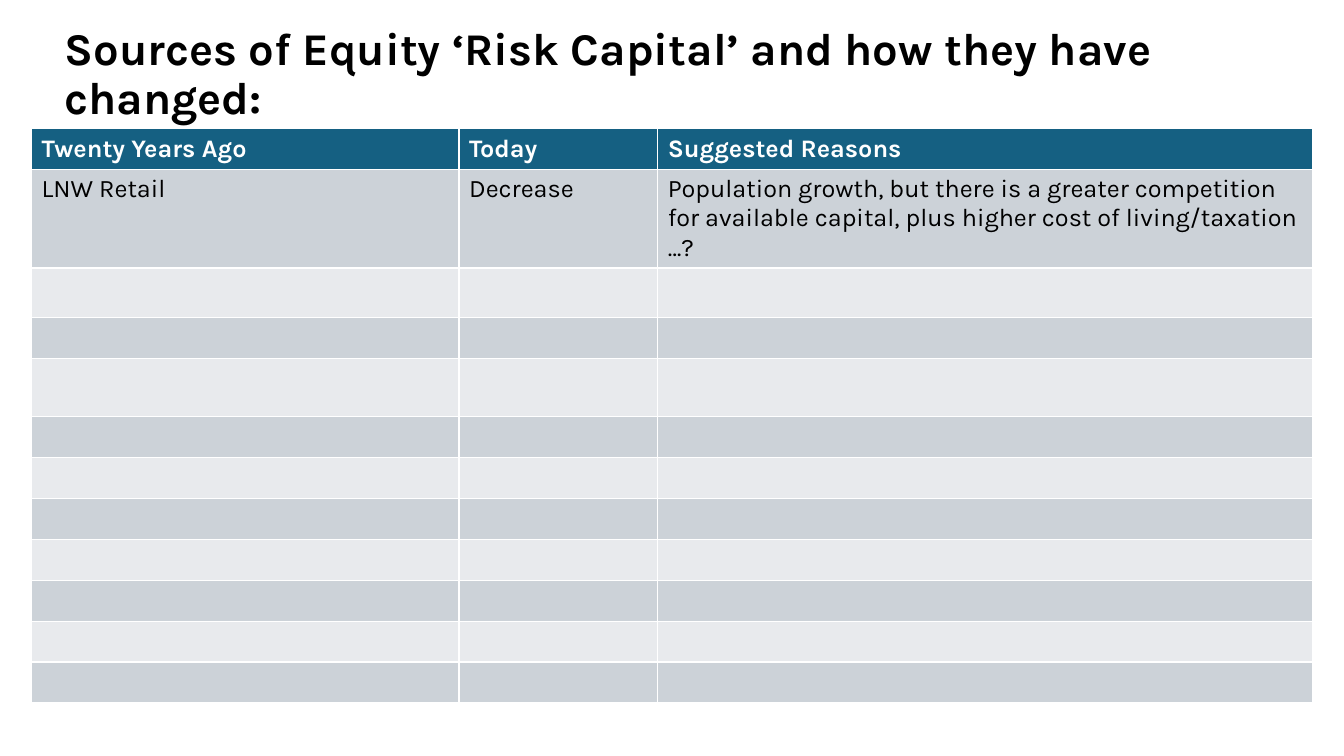
from pptx import Presentation
from pptx.dml.color import RGBColor
from pptx.enum.text import MSO_ANCHOR as Anchor, MSO_AUTO_SIZE as AutoSize, PP_ALIGN as Align
from pptx.util import Inches, Pt

BLACK = RGBColor(0x00, 0x00, 0x00)
WHITE = RGBColor(0xFF, 0xFF, 0xFF)
TEAL = RGBColor(0x15, 0x60, 0x82)
GREY = RGBColor(0xCC, 0xD2, 0xD8)
PALE = RGBColor(0xE8, 0xEA, 0xED)

COLUMNS = [4.24, 1.97, 6.5]
ROWS = [0.4, 0.98, 0.49, 0.39, 0.58] + [0.4] * 7
HEADINGS = ["Twenty Years Ago", "Today", "Suggested Reasons"]
RETAIL = [
    "LNW Retail",
    "Decrease",
    "Population growth, but there is a greater competition for available capital, "
    "plus higher cost of living/taxation …?",
]


class SlideBuilder:
    """Holds the style and the current slide, and adds its elements."""

    def __init__(self, deck, font):
        self.deck = deck
        self.font = font
        self.page = deck.slides.add_slide(deck.slide_layouts[5])

    def place(self, left, top, width=0, height=0):
        """Turn percentages of the slide's size into lengths."""
        wide, high = self.deck.slide_width / 100, self.deck.slide_height / 100
        return int(left * wide), int(top * high), int(width * wide), int(height * high)

    def add_span(self, para, text, size, color, bold=False):
        """Add one run to a paragraph."""
        span = para.add_run()
        span.text = text
        span.font.name = self.font
        span.font.size = Pt(size)
        span.font.bold = bold
        span.font.color.rgb = color

    def add_title(self, text, *shares):
        """Fill and move the title placeholder."""
        box = self.page.shapes.title
        box.left, box.top, box.width, box.height = self.place(*shares)
        frame = box.text_frame
        frame.word_wrap = True
        frame.auto_size = AutoSize.NONE
        frame.vertical_anchor = Anchor.MIDDLE
        para = frame.paragraphs[0]
        para.alignment = Align.LEFT
        para.line_spacing = 0.9
        self.add_span(para, text, 32.4, BLACK, True)

    def add_grid(self, lines, columns, rows, left, top):
        """Add a banded table with a header row."""
        x, y, _, _ = self.place(left, top)
        grid = self.page.shapes.add_table(
            len(rows), len(columns), x, y, Inches(sum(columns)), Inches(sum(rows))
        ).table
        for column, width in zip(grid.columns, columns):
            column.width = Inches(width)
        for index, (row, height) in enumerate(zip(grid.rows, rows)):
            row.height = Inches(height)
            header = index == 0
            fill = TEAL if header else (GREY if index % 2 else PALE)
            for cell in row.cells:
                cell.fill.solid()
                cell.fill.fore_color.rgb = fill
            if index < len(lines):
                for cell, text in zip(row.cells, lines[index]):
                    para = cell.text_frame.paragraphs[0]
                    self.add_span(para, text, 18, WHITE if header else BLACK, header)


def main():
    deck = Presentation()
    deck.slide_width, deck.slide_height = Inches(13.33), Inches(7.5)
    slide = SlideBuilder(deck, "Karla")
    slide.add_grid([HEADINGS, RETAIL], COLUMNS, ROWS, 2.35, 17.05)
    slide.add_title(
        "Sources of Equity ‘Risk Capital’ and how they have changed:",
        4.05, 5.33, 86.27, 9.33,
    )
    deck.save("out.pptx")


if __name__ == "__main__":
    main()
